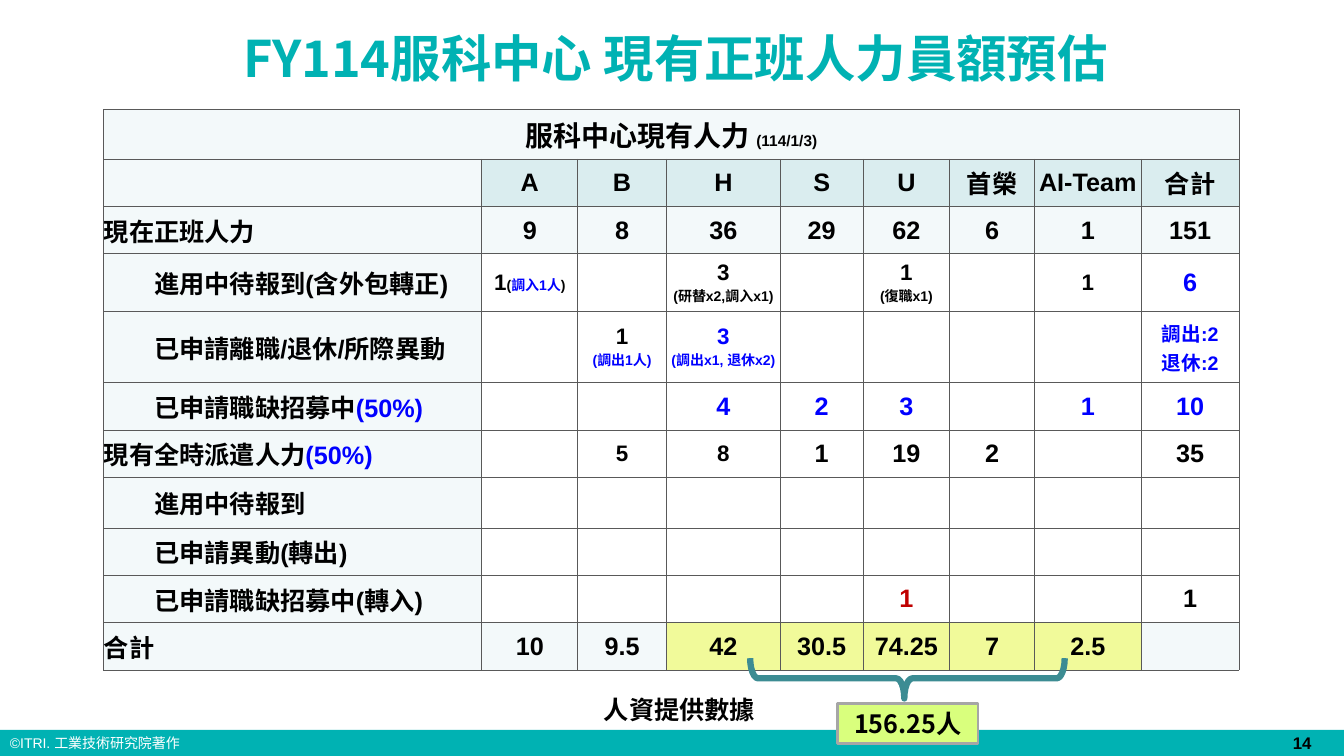
from lxml.etree import SubElement
from pptx import Presentation
from pptx.dml.color import RGBColor
from pptx.enum.shapes import MSO_SHAPE
from pptx.enum.text import MSO_ANCHOR, MSO_AUTO_SIZE, PP_ALIGN
from pptx.oxml.ns import qn
from pptx.util import Emu, Pt

EMU_PER_PX = 9144
BLACK = RGBColor(0x00, 0x00, 0x00)
WHITE = RGBColor(0xFF, 0xFF, 0xFF)
BLUE = RGBColor(0x00, 0x00, 0xFF)
RED = RGBColor(0xC0, 0x00, 0x00)
TEAL = RGBColor(0x00, 0xB2, 0xB3)
BRACE_TEAL = RGBColor(0x3C, 0x8C, 0x93)
GRID_GRAY = RGBColor(0x59, 0x59, 0x59)
FRAME_GRAY = RGBColor(0xA6, 0xA6, 0xA6)
PALE = RGBColor(0xF3, 0xF9, 0xFA)
HEADER = RGBColor(0xDA, 0xED, 0xEF)
YELLOW = RGBColor(0xF1, 0xFA, 0x9A)
LIME = RGBColor(0xD9, 0xFF, 0x7D)
LATIN = "Arial"
CJK = "Noto Sans CJK SC"

COLUMN_WIDTHS = [375, 95, 88, 113, 82, 86, 84, 106, 97]
ROW_HEIGHTS = [49, 47, 47, 57, 71, 47, 47, 50, 47, 47, 47]
HEADER_ROW, STAFF_ROW, TOTAL_ROW = 1, 2, 10
INDENTED_ROWS = {3, 4, 5, 7, 8, 9}
HIGHLIGHTED_COLUMNS = range(3, 8)


def px(length):
    """Turn pixels into EMU."""
    return Emu(length * EMU_PER_PX)


def span(text, size=18, color=BLACK):
    """Describe one formatted piece of cell text."""
    return text, size, color


def small(text, color=BLACK):
    """Describe a small remark inside a cell."""
    return span(text, 10, color)


def blue(text, size=18):
    """Describe a blue piece of cell text."""
    return span(text, size, BLUE)


ROWS = [
    [[[span("服科中心現有人力 ", 20), span("(114/1/3)", 11)]]],
    ["", "A", "B", "H", "S", "U", "首榮", "AI-Team", "合計"],
    ["現在正班人力", "9", "8", "36", "29", "62", "6", "1", "151"],
    ["進用中待報到(含外包轉正)",
     [[span("1", 16), small("("), small("調入1人", BLUE), small(")")]], "",
     [[span("3\n", 16), small("(研替x2,調入x1)")]], "",
     [[span("1\n", 16), small("(復職x1)")]], "", [[span("1", 16)]], [[blue("6")]]],
    ["已申請離職/退休/所際異動", "",
     [[span("1", 16)], [small("(調出1人)", BLUE)]],
     [[blue("3\n", 16), small("(調出x1, 退休x2)", BLUE)]], "", "", "", "",
     [[blue("調出:2", 14)], [blue("退休:2", 14)]]],
    [[[span("已申請職缺招募中"), blue("(50%)")]], "", "", [[blue("4")]], [[blue("2")]],
     [[blue("3")]], "", [[blue("1")]], [[blue("10")]]],
    [[[span("現有全時派遣人力"), blue("(50%)")]], "", [[span("5", 16)]], [[span("8", 16)]],
     "1", "19", "2", "", "35"],
    ["進用中待報到"],
    ["已申請異動(轉出)"],
    ["已申請職缺招募中(轉入)", "", "", "", "", [[span("1", 18, RED)]], "", "", "1"],
    ["合計", "10", "9.5", "42", "30.5", "74.25", "7", "2.5", ""],
]


def write(para, text, *, size=18, color=BLACK, bold=True, latin=LATIN):
    """Add a formatted run, with a line break if the text ends in one."""
    run = para.add_run()
    run.text = text.rstrip("\n")
    run.font.size = Pt(size)
    run.font.bold = bold
    run.font.name = latin
    run.font.color.rgb = color
    SubElement(run.font._element, qn("a:ea"), typeface=CJK)
    if text.endswith("\n"):
        para.add_line_break()
        SubElement(para._p[-1], qn("a:rPr"), sz=str(size * 100))


def fill_frame(frame, text, *, align=PP_ALIGN.LEFT, anchor=MSO_ANCHOR.TOP,
               grow=False, spacing=None, **font):
    """Put one paragraph into a text frame."""
    frame.word_wrap = True
    frame.vertical_anchor = anchor
    if grow:
        frame.auto_size = MSO_AUTO_SIZE.SHAPE_TO_FIT_TEXT
    para = frame.paragraphs[0]
    para.alignment = align
    if spacing:
        para.line_spacing = spacing
    write(para, text, **font)


def add_text(page, place, text, **style):
    """Add a text box."""
    box = page.shapes.add_textbox(*map(px, place))
    fill_frame(box.text_frame, text, **style)


def add_shape(page, kind, place, *, fill=None, line=None, width=1):
    """Add a preset shape without shadow."""
    shape = page.shapes.add_shape(kind, *map(px, place))
    shape.shadow.inherit = False
    if fill is None:
        shape.fill.background()
    else:
        shape.fill.solid()
        shape.fill.fore_color.rgb = fill
    if line is None:
        shape.line.fill.background()
    else:
        shape.line.color.rgb = line
        shape.line.width = Pt(width)
    return shape


def cell_fill(row, column):
    """Choose the fill of a cell from its place in the table."""
    if row == TOTAL_ROW and column in HIGHLIGHTED_COLUMNS:
        return YELLOW
    if row == HEADER_ROW and column > 0:
        return HEADER
    if column == 0 or row in (0, STAFF_ROW, TOTAL_ROW):
        return PALE
    return None


def style_cell(cell, fill):
    """Set the margins, borders and fill of a cell."""
    cell.margin_left = cell.margin_right = cell.margin_top = cell.margin_bottom = 0
    cell.vertical_anchor = MSO_ANCHOR.MIDDLE
    properties = cell._tc.get_or_add_tcPr()
    for side in ("a:lnL", "a:lnR", "a:lnT", "a:lnB"):
        border = SubElement(properties, qn(side), w=str(Pt(0.75)))
        paint = SubElement(border, qn("a:solidFill"))
        SubElement(paint, qn("a:srgbClr"), val=str(GRID_GRAY))
    if fill is None:
        cell.fill.background()
    else:
        cell.fill.solid()
        cell.fill.fore_color.rgb = fill


def write_cell(cell, content, align, indented):
    """Write plain text or lists of spans into a cell."""
    if not content:
        return
    lines = [[span(content)]] if isinstance(content, str) else content
    for index, spans in enumerate(lines):
        para = cell.text_frame.add_paragraph() if index else cell.text_frame.paragraphs[0]
        para.alignment = align
        if indented:
            para.level = 1
            para._p.get_or_add_pPr().set("marL", str(px(50)))
        for text, size, color in spans:
            write(para, text, size=size, color=color)


def add_staff_table(page):
    """Add the headcount table."""
    frame = page.shapes.add_table(len(ROW_HEIGHTS), len(COLUMN_WIDTHS), px(103), px(109),
                                  px(sum(COLUMN_WIDTHS)), px(sum(ROW_HEIGHTS)))
    table = frame.table
    table.first_row = table.horz_banding = False
    for column, width in zip(table.columns, COLUMN_WIDTHS):
        column.width = px(width)
    for row, height in zip(table.rows, ROW_HEIGHTS):
        row.height = px(height)
    table.cell(0, 0).merge(table.cell(0, len(COLUMN_WIDTHS) - 1))
    for row, contents in enumerate(ROWS):
        for column in range(len(COLUMN_WIDTHS)):
            cell = table.cell(row, column)
            style_cell(cell, cell_fill(row, column))
            is_label = column == 0 and row > 0
            content = contents[column] if column < len(contents) else ""
            write_cell(cell, content, PP_ALIGN.LEFT if is_label else PP_ALIGN.CENTER,
                       is_label and row in INDENTED_ROWS)


def main():
    """Build the headcount slide."""
    deck = Presentation()
    deck.slide_width, deck.slide_height = px(1333), px(750)
    page = deck.slides.add_slide(deck.slide_layouts[6])
    add_shape(page, MSO_SHAPE.RECTANGLE, (0, 724, 1333, 26), fill=TEAL)
    add_text(page, (0, 724, 390, 27), "©ITRI. 工業技術研究院著作", size=10, color=WHITE,
             bold=False, grow=True)
    add_staff_table(page)
    add_text(page, (66, 29, 1208, 103), "FY114服科中心 現有正班人力員額預估", size=36,
             color=TEAL, latin=CJK, align=PP_ALIGN.CENTER, spacing=0.9)
    total = add_shape(page, MSO_SHAPE.RECTANGLE, (831, 698, 139, 40), fill=LIME,
                      line=FRAME_GRAY, width=2)
    fill_frame(total.text_frame, "156.25人", latin=CJK, align=PP_ALIGN.CENTER, grow=True)
    add_text(page, (1250, 724, 83, 26), "14", size=12, align=PP_ALIGN.CENTER,
             anchor=MSO_ANCHOR.MIDDLE)
    brace = add_shape(page, MSO_SHAPE.RIGHT_BRACE, (880, 517, 40, 312), line=BRACE_TEAL,
                      width=4.5)
    brace.rotation = 90
    brace.adjustments[0], brace.adjustments[1] = 0.2, 0.51
    add_text(page, (589, 684, 178, 40), "人資提供數據", latin=CJK, grow=True)
    deck.save("out.pptx")


if __name__ == "__main__":
    main()
